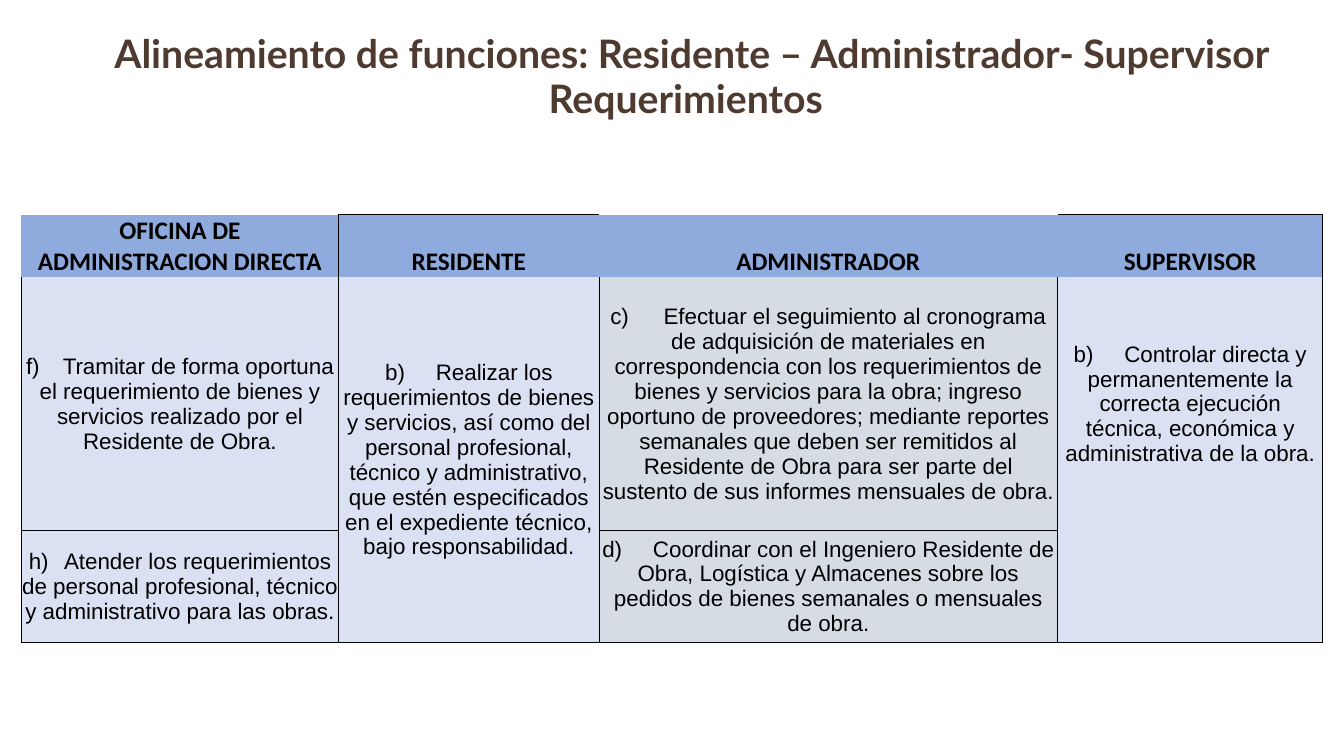
from lxml.etree import SubElement
from pptx import Presentation
from pptx.dml.color import RGBColor
from pptx.enum.text import MSO_ANCHOR, MSO_AUTO_SIZE, PP_ALIGN
from pptx.oxml.ns import qn
from pptx.util import Inches, Pt

BROWN = RGBColor(0x4E, 0x3A, 0x2F)
BLACK = RGBColor(0x00, 0x00, 0x00)
HEADER_BLUE = RGBColor(0x8F, 0xAA, 0xDC)
PALE_BLUE = RGBColor(0xD9, 0xE1, 0xF2)
GREY = RGBColor(0xD6, 0xDC, 0xE4)

COLUMNS = (3.15, 2.58, 4.55, 2.63)
ROWS = (0.62, 2.51, 1.11)
COLUMN_FILLS = (PALE_BLUE, PALE_BLUE, GREY, PALE_BLUE)
NARROW_SPACE = 2.75

HEADERS = ("OFICINA DE ADMINISTRACION DIRECTA", "RESIDENTE", "ADMINISTRADOR", "SUPERVISOR")
DUTIES = {
    (1, 0): ("f)", 6, "Tramitar de forma oportuna el requerimiento de bienes y servicios "
             "realizado por el Residente de Obra."),
    (1, 1): ("b)", 8, "Realizar los requerimientos de bienes y servicios, así como del personal "
             "profesional, técnico y administrativo, que estén especificados en el expediente "
             "técnico, bajo responsabilidad."),
    (1, 2): ("c)", 9, "Efectuar el seguimiento al cronograma de adquisición de materiales en "
             "correspondencia con los requerimientos de bienes y servicios para la obra; ingreso "
             "oportuno de proveedores; mediante reportes semanales que deben ser remitidos al "
             "Residente de Obra para ser parte del sustento de sus informes mensuales de obra."),
    (1, 3): ("b)", 8, "Controlar directa y permanentemente la correcta ejecución técnica, "
             "económica y administrativa de la obra."),
    (2, 0): ("h)", 4, "Atender los requerimientos de personal profesional, técnico y "
             "administrativo para las obras."),
    (2, 2): ("d)", 8, "Coordinar con el Ingeniero Residente de Obra, Logística y Almacenes sobre "
             "los pedidos de bienes semanales o mensuales de obra."),
}
BORDERS = (
    ("R", "LT", "", "TR"),
    ("LRB", "LRB", "LRB", "LR"),
    ("LRTB", "LRB", "LRTB", "LRB"),
)


def set_font(font, name, size, color, bold=False):
    """Set the look of a paragraph's or a run's font."""
    font.name, font.size, font.bold = name, Pt(size), bold
    font.color.rgb = color


def add_title(page):
    """Place and fill the two-line title."""
    title = page.shapes.title
    title.left, title.top = Inches(0.54), 0
    title.width, title.height = Inches(12.52), Inches(1.45)
    frame = title.text_frame
    frame.word_wrap = True
    frame.auto_size = MSO_AUTO_SIZE.NONE
    frame.vertical_anchor = MSO_ANCHOR.MIDDLE
    frame.margin_left = frame.margin_right = frame.margin_top = frame.margin_bottom = 0
    para = frame.paragraphs[0]
    para.alignment, para.line_spacing = PP_ALIGN.CENTER, 0.9
    set_font(para.font, "Lato", 28, BROWN, bold=True)
    lead = para.add_run()
    lead.text = " "
    lead.font.size = Pt(36)
    para.add_run().text = "Alineamiento de funciones: Residente – Administrador- Supervisor"
    para.add_line_break()
    para.add_run().text = "Requerimientos"
    for span in para.runs:
        set_font(span.font, "Lato", 36 if span.text == " " else 28, BROWN, bold=True)


def set_borders(cell, sides, weight):
    """Draw the named sides of a cell in black and clear the others."""
    properties = cell._tc.get_or_add_tcPr()
    for index, side in enumerate("LRTB"):
        line = SubElement(properties, qn(f"a:ln{side}"), w=str(Pt(weight)))
        if side in sides:
            fill = SubElement(line, qn("a:solidFill"))
            SubElement(fill, qn("a:srgbClr"), val=str(BLACK))
        else:
            SubElement(line, qn("a:noFill"))
        properties.insert(index, line)


def style_cell(cell, fill, anchor):
    """Set a cell's fill, margins and anchor, and centre its text."""
    cell.fill.solid()
    cell.fill.fore_color.rgb = fill
    cell.margin_left = cell.margin_right = cell.margin_top = Inches(0.01)
    cell.margin_bottom = 0
    cell.vertical_anchor = anchor
    cell.text_frame.paragraphs[0].alignment = PP_ALIGN.CENTER


def write_header(cell, text):
    """Write a bold column heading."""
    para = cell.text_frame.paragraphs[0]
    para.add_run().text = text
    set_font(para.font, "Calibri", 18, BLACK, bold=True)


def write_duty(cell, letter, gap, text):
    """Write a lettered duty, with one widened space after the letter."""
    para = cell.text_frame.paragraphs[0]
    set_font(para.font, "Arial", 16, BLACK)
    for words in (letter, " ", text):
        span = para.add_run()
        span.text = words
        if words == " ":
            set_font(span.font, "Times New Roman", 11, BLACK)
            span.font._element.set("spc", str(round((gap - 1) * NARROW_SPACE * 100)))


def add_duties_table(page):
    """Build the table of duties by office."""
    frame = page.shapes.add_table(len(ROWS), len(COLUMNS), Inches(0.21), Inches(2.13),
                                  Inches(sum(COLUMNS)), Inches(sum(ROWS)))
    table = frame.table
    table.horz_banding = False
    for column, width in zip(table.columns, COLUMNS):
        column.width = Inches(width)
    for row, height in zip(table.rows, ROWS):
        row.height = Inches(height)
    for row, row_borders in enumerate(BORDERS):
        for column, sides in enumerate(row_borders):
            cell = table.cell(row, column)
            if row == 0:
                style_cell(cell, HEADER_BLUE, MSO_ANCHOR.BOTTOM)
                write_header(cell, HEADERS[column])
            else:
                style_cell(cell, COLUMN_FILLS[column], MSO_ANCHOR.MIDDLE)
            if (row, column) in DUTIES:
                write_duty(cell, *DUTIES[row, column])
            set_borders(cell, sides, 0.5 if row else 1)
    table.cell(1, 1).merge(table.cell(2, 1))


def main():
    """Build and save the slide."""
    deck = Presentation()
    deck.slide_width, deck.slide_height = Inches(13.33), Inches(7.5)
    page = deck.slides.add_slide(deck.slide_layouts[5])
    add_title(page)
    add_duties_table(page)
    deck.save("out.pptx")


if __name__ == "__main__":
    main()
